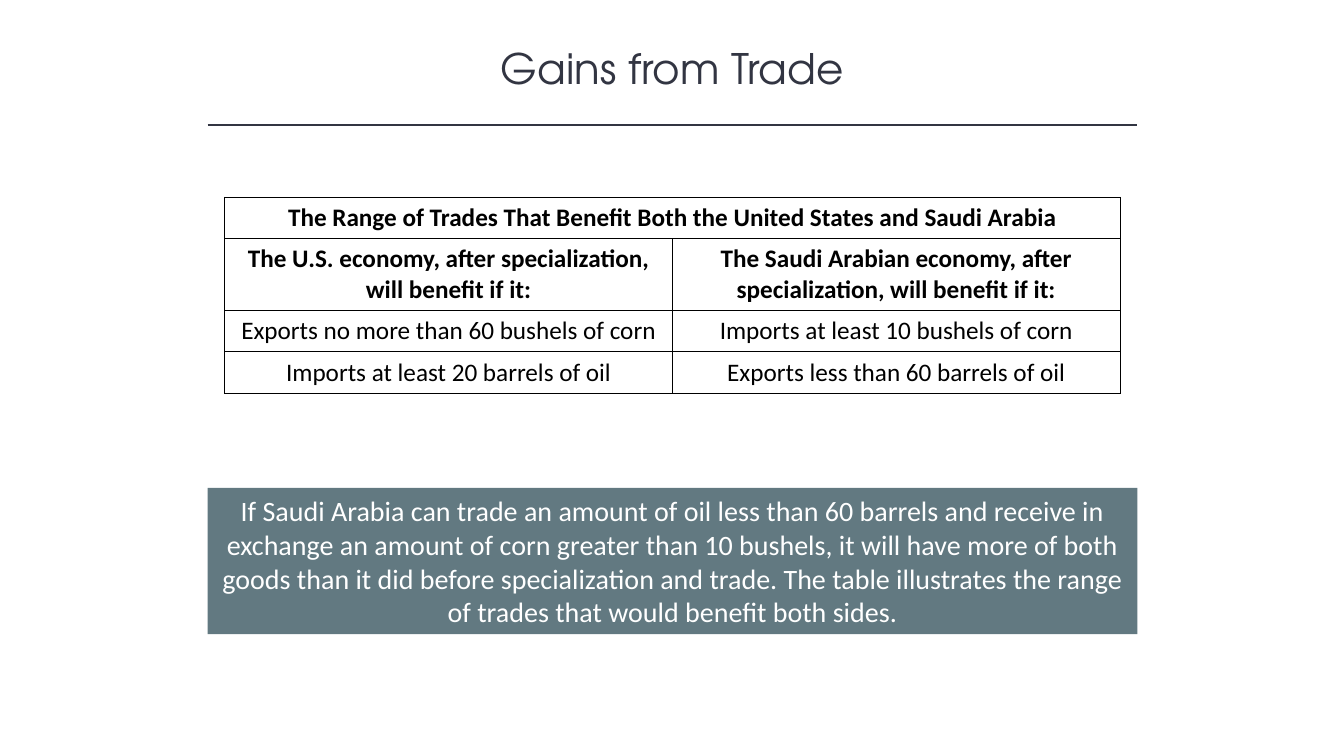
from dataclasses import dataclass

from lxml.etree import SubElement
from pptx import Presentation
from pptx.dml.color import RGBColor
from pptx.enum.shapes import MSO_CONNECTOR, MSO_SHAPE
from pptx.enum.text import MSO_ANCHOR, PP_ALIGN
from pptx.oxml import parse_xml
from pptx.oxml.ns import nsdecls, qn
from pptx.util import Inches, Pt


@dataclass(frozen=True)
class Theme:
    ink: str = "323542"
    slate: str = "627981"
    white: str = "FFFFFF"
    black: str = "000000"
    title_font: str = "TeX Gyre Adventor"
    body_font: str = "Calibri"
    title_size: int = 30
    note_size: int = 20
    table_size: int = 18
    rule_width: int = 1


def add_run(frame, wording, font, size, color, bold=False):
    paragraph = frame.paragraphs[0]
    paragraph.alignment = PP_ALIGN.CENTER
    run = paragraph.add_run()
    run.text = wording
    run.font.name = font
    run.font.size = Pt(size)
    run.font.bold = bold
    run.font.color.rgb = RGBColor.from_string(color)


theme = Theme()
deck = Presentation()
deck.slide_width = Inches(13.33)
deck.slide_height = Inches(7.5)
slide = deck.slides.add_slide(deck.slide_layouts[5])

center = Inches(6.67)
band_width = Inches(9.22)
band_left = center - band_width // 2

heading = slide.shapes.title
heading.left, heading.top = center - Inches(5), Inches(0.37)
heading.width, heading.height = Inches(10), Inches(0.61)
heading.text_frame.word_wrap = True
heading.text_frame.vertical_anchor = MSO_ANCHOR.MIDDLE
add_run(heading.text_frame, "Gains from Trade", theme.title_font, theme.title_size, theme.ink)

rule_top = Inches(1.24)
heading_rule = slide.shapes.add_connector(
    MSO_CONNECTOR.STRAIGHT, band_left, rule_top, band_left + band_width, rule_top
)
heading_rule.line.color.rgb = RGBColor.from_string(theme.ink)
heading_rule.line.width = Pt(theme.rule_width)
SubElement(heading_rule._element.spPr, qn("a:effectLst"))

conclusion = slide.shapes.add_shape(
    MSO_SHAPE.RECTANGLE, band_left, Inches(4.84), band_width, Inches(1.45)
)
conclusion.shadow.inherit = False
conclusion.fill.solid()
conclusion.fill.fore_color.rgb = RGBColor.from_string(theme.slate)
conclusion.line.fill.background()
conclusion.text_frame.word_wrap = True
conclusion.text_frame.vertical_anchor = MSO_ANCHOR.MIDDLE
add_run(
    conclusion.text_frame,
    "If Saudi Arabia can trade an amount of oil less than 60 barrels and receive in "
    "exchange an amount of corn greater than 10 bushels, it will have more of both "
    "goods than it did before specialization and trade. The table illustrates the "
    "range of trades that would benefit both sides.",
    theme.body_font,
    theme.note_size,
    theme.white,
)

trade_ranges = [
    ["The Range of Trades That Benefit Both the United States and Saudi Arabia", ""],
    [
        "The U.S. economy, after specialization, will benefit if it:",
        "The Saudi Arabian economy, after specialization, will benefit if it:",
    ],
    ["Exports no more than 60 bushels of corn", "Imports at least 10 bushels of corn"],
    ["Imports at least 20 barrels of oil", "Exports less than 60 barrels of oil"],
]
heading_rows = 2
row_heights = [0.41, 0.69, 0.41, 0.41]
column_width = Inches(4.44)

ranges = slide.shapes.add_table(
    len(trade_ranges), 2, center - column_width, Inches(1.96),
    2 * column_width, Inches(sum(row_heights)),
).table
for column in ranges.columns:
    column.width = column_width
for row, height in zip(ranges.rows, row_heights):
    row.height = Inches(height)
ranges.cell(0, 0).merge(ranges.cell(0, 1))

for row_index, statements in enumerate(trade_ranges):
    for column_index, statement in enumerate(statements):
        cell = ranges.cell(row_index, column_index)
        cell.vertical_anchor = MSO_ANCHOR.MIDDLE
        for side in ("lnL", "lnR", "lnT", "lnB"):
            cell._tc.get_or_add_tcPr().append(parse_xml(
                f'<a:{side} {nsdecls("a")} w="{Pt(theme.rule_width)}">'
                f'<a:solidFill><a:srgbClr val="{theme.black}"/></a:solidFill></a:{side}>'
            ))
        cell.fill.solid()
        cell.fill.fore_color.rgb = RGBColor.from_string(theme.white)
        if statement:
            add_run(
                cell.text_frame, statement, theme.body_font, theme.table_size,
                theme.black, row_index < heading_rows,
            )

deck.save("out.pptx")
